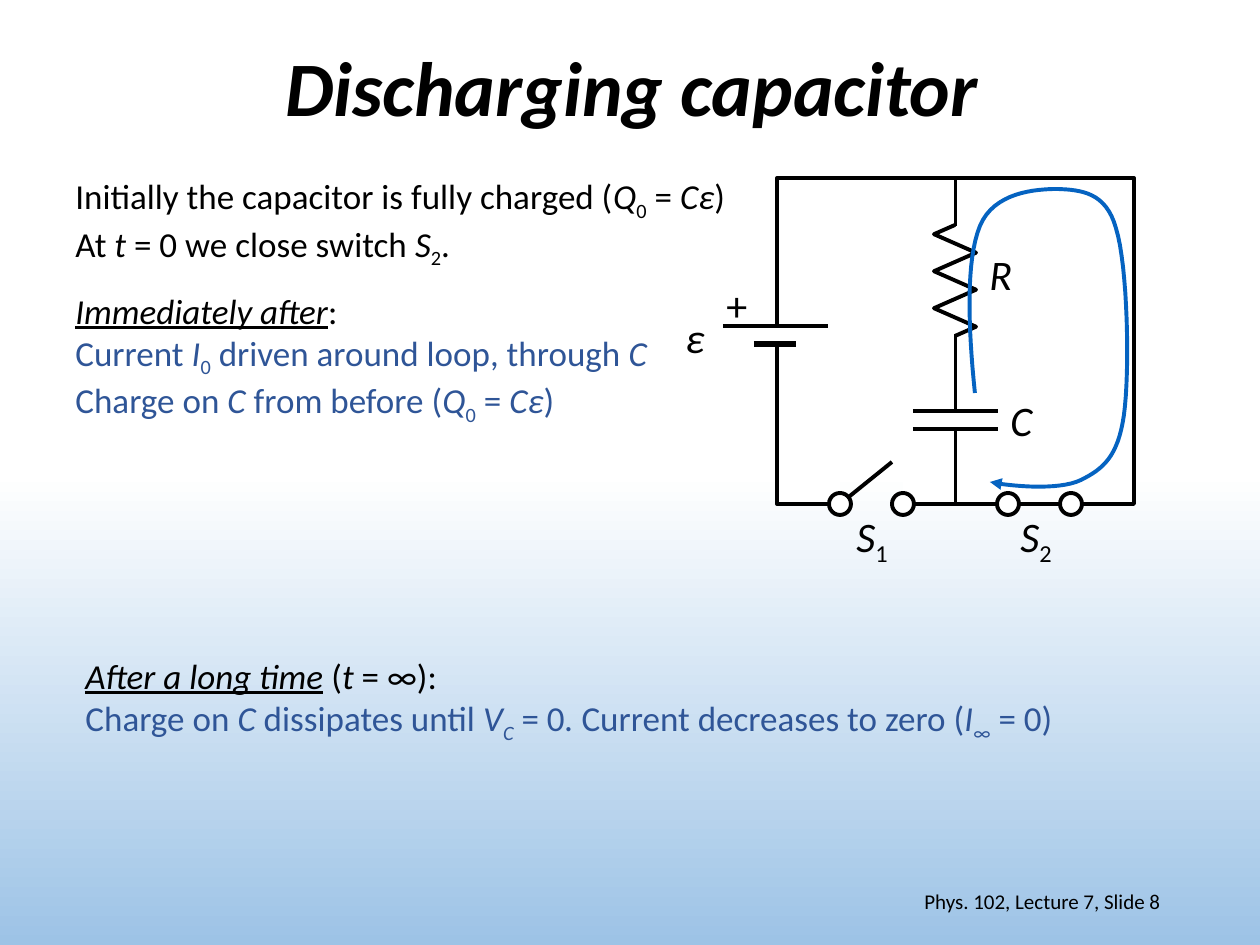
"""Build the slide on a discharging capacitor with its circuit diagram."""
from lxml import etree
from pptx import Presentation
from pptx.dml.color import RGBColor
from pptx.enum.shapes import MSO_CONNECTOR, MSO_SHAPE
from pptx.enum.text import MSO_ANCHOR, MSO_AUTO_SIZE, PP_ALIGN
from pptx.oxml.ns import qn
from pptx.util import Pt

PX = 914400 // 126
FONT = "Calibri"
BLACK = RGBColor(0x00, 0x00, 0x00)
WHITE = RGBColor(0xFF, 0xFF, 0xFF)
SKY = RGBColor(0x9D, 0xC3, 0xE6)
BLUE = RGBColor(0x2F, 0x55, 0x97)
CURRENT_BLUE = RGBColor(0x05, 0x63, 0xC1)
STRAIGHT = MSO_CONNECTOR.STRAIGHT
RECTANGLE, OVAL = MSO_SHAPE.RECTANGLE, MSO_SHAPE.OVAL
LEFT, CENTER, RIGHT = PP_ALIGN.LEFT, PP_ALIGN.CENTER, PP_ALIGN.RIGHT
TOP, MIDDLE = MSO_ANCHOR.TOP, MSO_ANCHOR.MIDDLE
FIT_SHAPE, NO_FIT = MSO_AUTO_SIZE.SHAPE_TO_FIT_TEXT, MSO_AUTO_SIZE.NONE

# Run styles: b bold, i italic, u underline, s subscript
TITLE = [(BLACK, [("Discharging capacitor", "bi")])]
FOOTER = [(BLACK, [("Phys. 102, Lecture 7, Slide 8", "")])]
INITIAL = [
    (BLACK, [("Initially the capacitor is fully charged (", ""), ("Q", "i"), ("0", "s"),
             (" = ", ""), ("Cε", "i"), (")", "")]),
    (BLACK, [("At ", ""), ("t", "i"), (" = 0 we close switch ", ""), ("S", "i"),
             ("2", "s"), (".", "")]),
]
IMMEDIATELY = [
    (BLACK, [("Immediately after", "iu"), (":", "")]),
    (BLUE, [("Current ", ""), ("I", "i"), ("0", "s"), (" driven around loop, through ", ""),
            ("C", "i"), (" Charge on ", ""), ("C", "i"), (" from before (", ""), ("Q", "i"),
            ("0", "s"), (" = ", ""), ("Cε", "i"), (")", "")]),
]
LONG_TIME = [
    (BLACK, [("After a long time", "iu"), (" (", ""), ("t", "i"), (" = ∞):", "")]),
    (BLUE, [("Charge on ", ""), ("C", "i"), (" dissipates until ", ""), ("V", "i"),
            ("C", "is"), (" = 0", ""), (". ", "i"), ("Current decreases to zero (", ""),
            ("I", "i"), ("∞", "s"), (" = 0)", "")]),
]
LABELS = [
    ((714, 273, 47, 63), [("+", "")]),
    ((673, 305, 44, 63), [("ε", "i")]),
    ((977, 242, 48, 63), [("R", "i")]),
    ((998, 388, 48, 63), [("C", "i")]),
    ((844, 504, 59, 63), [("S", "i"), ("1", "s")]),
    ((1008, 504, 59, 63), [("S", "i"), ("2", "s")]),
]

CIRCUIT = (777, 178, 357, 326)
GAPS = {
    "battery": (714, 325, 125, 20),
    "resistor": (932, 226, 44, 108),
    "switch": (840, 483, 63, 53),
    "capacitor": (892, 410, 125, 20),
}
PLATES = [
    ((723, 326), (828, 326), 2.25),
    ((754, 344), (796, 344), 3),
    ((913, 411), (998, 411), 2.25),
    ((913, 429), (998, 429), 2.25),
]
SWITCH_LEVER = ((892, 462), (840, 504), 2.25)
TERMINALS, TERMINAL_SIZE, WIRE_Y = (840, 903, 1008, 1071), 22, 504
BRANCH_X, ZIGZAG_TOP, ZIGZAG_STEP, ZIGZAG_REACH = 955, 225, 18.5, 21
LOOP_START = (975, 393)
LOOP_CURVES = [
    ((968, 326), (966, 260), (980, 226)),
    ((994, 192), (1036, 189), (1058, 189)),
    ((1081, 190), (1106, 192), (1116, 228)),
    ((1128, 266), (1130, 373), (1124, 415)),
    ((1118, 457), (1103, 469), (1081, 480)),
    ((1058, 491), (1009, 486), (990, 482)),
]


def emu(values):
    return [round(value * PX) for value in values]


def add_text(slide, box, lines, size, wrap=True, align=LEFT, anchor=TOP, fit=FIT_SHAPE):
    frame = slide.shapes.add_textbox(*emu(box)).text_frame
    frame.word_wrap, frame.auto_size, frame.vertical_anchor = wrap, fit, anchor
    for index, (color, runs) in enumerate(lines):
        paragraph = frame.add_paragraph() if index else frame.paragraphs[0]
        paragraph.alignment = align
        paragraph.font.name, paragraph.font.size = FONT, Pt(size)
        paragraph.font.color.rgb = color
        for text, style in runs:
            run = paragraph.add_run()
            run.text = text
            run.font.bold = "b" in style
            run.font.italic = "i" in style
            run.font.underline = "u" in style
            if "s" in style:
                run.font._element.set("baseline", "-25000")
    return frame


def add_outlined(slide, kind, box):
    shape = slide.shapes.add_shape(kind, *emu(box))
    shape.shadow.inherit = False
    shape.fill.solid()
    shape.fill.fore_color.rgb = WHITE
    shape.line.color.rgb = BLACK
    shape.line.width = Pt(2.25)
    return shape


def add_gap(slide, box):
    shape = slide.shapes.add_shape(RECTANGLE, *emu(box))
    shape.shadow.inherit = False
    shape.line.fill.background()
    shape._element.set("useBgFill", "1")


def add_line(slide, start, end, width):
    line = slide.shapes.add_connector(STRAIGHT, *emu(start + end))
    line.line.color.rgb = BLACK
    line.line.width = Pt(width)
    etree.SubElement(line._element.spPr, qn("a:effectLst"))
    return line


def add_path(slide, points, color):
    start, *others = [emu(point) for point in points]
    builder = slide.shapes.build_freeform(*start)
    builder.add_line_segments(others, close=False)
    shape = builder.convert_to_shape()
    shape.shadow.inherit = False
    shape.fill.background()
    shape.line.color.rgb = color
    shape.line.width = Pt(2.25)
    return shape


def bezier_points(start, curves, steps=16):
    points = [start]
    for first, second, end in curves:
        for step in range(1, steps + 1):
            t = step / steps
            weights = ((1 - t) ** 3, 3 * t * (1 - t) ** 2, 3 * t * t * (1 - t), t ** 3)
            controls = (start, first, second, end)
            points.append(tuple(sum(weight * control[axis] for weight, control
                                    in zip(weights, controls)) for axis in (0, 1)))
        start = end
    return points


def zigzag_points():
    offsets = [0] + [ZIGZAG_REACH * side for side in (-1, 1) * 3] + [0]
    heights = [0] + [step + 0.5 for step in range(6)] + [6]
    return [(BRANCH_X + offset, ZIGZAG_TOP + ZIGZAG_STEP * height)
            for offset, height in zip(offsets, heights)]


def add_circuit(slide):
    loop = add_outlined(slide, RECTANGLE, CIRCUIT)
    branch = add_line(slide, (BRANCH_X, 178), (BRANCH_X, WIRE_Y), 2.25)
    branch.begin_connect(loop, 0)
    branch.end_connect(loop, 2)
    for box in GAPS.values():
        add_gap(slide, box)
    for line in PLATES + [SWITCH_LEVER]:
        add_line(slide, *line)
    add_path(slide, zigzag_points(), BLACK)
    radius = TERMINAL_SIZE / 2
    for x in TERMINALS:
        add_outlined(slide, OVAL, (x - radius, WIRE_Y - radius, TERMINAL_SIZE, TERMINAL_SIZE))
    arrow = add_path(slide, bezier_points(LOOP_START, LOOP_CURVES), CURRENT_BLUE)
    etree.SubElement(arrow.line._get_or_add_ln(), qn("a:tailEnd"), type="triangle")
    for box, runs in LABELS:
        add_text(slide, box, [(BLACK, runs)], 24, wrap=False)


def main():
    presentation = Presentation()
    presentation.slide_width, presentation.slide_height = emu((1260, 945))
    slide = presentation.slides.add_slide(presentation.slide_layouts[6])
    fill = slide.background.fill
    fill.gradient()
    fill.gradient_angle = 270
    for stop, position, color in zip(fill.gradient_stops, (0.5, 1), (WHITE, SKY)):
        stop.position, stop.color.rgb = position, color
    title = add_text(slide, (89, 0, 1086, 183), TITLE, 44, align=CENTER, anchor=MIDDLE, fit=NO_FIT)
    title.paragraphs[0].line_spacing = 0.9
    add_text(slide, (890, 876, 283, 50), FOOTER, 12, align=RIGHT, anchor=MIDDLE, fit=NO_FIT)
    add_circuit(slide)
    add_text(slide, (63, 168, 683, 97), INITIAL, 20, wrap=False)
    add_text(slide, (63, 283, 599, 140), IMMEDIATELY, 20)
    add_text(slide, (73, 648, 1018, 97), LONG_TIME, 20)
    presentation.save("out.pptx")


if __name__ == "__main__":
    main()
